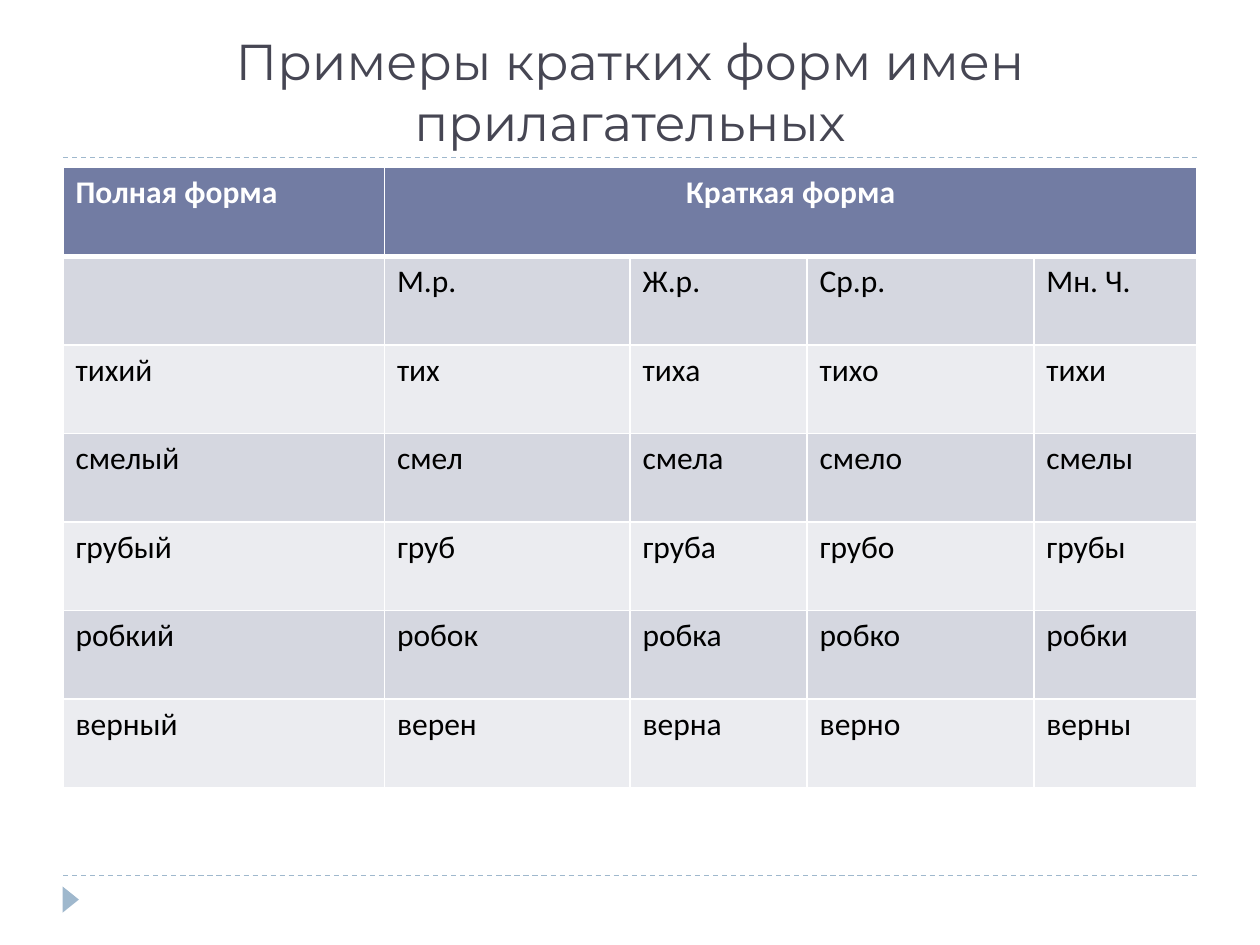
from lxml.etree import SubElement as Sub
from pptx import Presentation
from pptx.dml.color import RGBColor as RGB
from pptx.enum.dml import MSO_LINE as Dash
from pptx.enum.shapes import MSO_CONNECTOR as Conn, MSO_SHAPE as Shape
from pptx.enum.text import MSO_ANCHOR as Anchor, PP_ALIGN as Align
from pptx.oxml.ns import qn
from pptx.util import Cm, Pt

HUES = {
    "title": "464653",
    "accent": "9FB8CD",
    "head": "727CA3",
    "dark": "D5D7E0",
    "light": "EBECF0",
    "white": "FFFFFF",
    "black": "000000",
}
LEFT, WIDTH = 1.27, 22.86
COLS = [6.48, 4.95, 3.57, 4.57, 3.29]
ROWS = [
    ["Полная форма", "Краткая форма", "", "", ""],
    ["", "М.р.", "Ж.р.", "Ср.р.", "Мн. Ч."],
    ["тихий", "тих", "тиха", "тихо", "тихи"],
    ["смелый", "смел", "смела", "смело", "смелы"],
    ["грубый", "груб", "груба", "грубо", "грубы"],
    ["робкий", "робок", "робка", "робко", "робки"],
    ["верный", "верен", "верна", "верно", "верны"],
]


def hue(name):
    return RGB.from_string(HUES[name])


def style(para, face, size, color, bold=False):
    for run in para.runs:
        font = run.font
        font.name, font.size, font.bold = face, Pt(size), bold
        font.color.rgb = hue(color)


def add_title(slide, text):
    box = slide.shapes.add_textbox(Cm(LEFT), Cm(0.43), Cm(WIDTH), Cm(2.75))
    frame = box.text_frame
    frame.word_wrap = True
    frame.vertical_anchor = Anchor.BOTTOM
    frame.text = text
    para = frame.paragraphs[0]
    para.alignment = Align.CENTER
    style(para, "Montserrat", 28.8, "title")


def add_rule(slide, y):
    rule = slide.shapes.add_connector(
        Conn.STRAIGHT, Cm(LEFT), Cm(y), Cm(LEFT + WIDTH), Cm(y))
    rule.line.color.rgb = hue("accent")
    rule.line.width = Pt(0.75)
    rule.line.dash_style = Dash.DASH
    Sub(rule._element.spPr, qn("a:effectLst"))


def add_marker(slide):
    mark = slide.shapes.add_shape(
        Shape.ISOSCELES_TRIANGLE, Cm(1.16), Cm(17.97), Cm(0.53), Cm(0.33))
    mark.rotation = 90
    mark.shadow.inherit = False
    mark.fill.solid()
    mark.fill.fore_color.rgb = hue("accent")
    mark.line.fill.background()


def add_edges(cell, top, bottom):
    props = cell._tc.get_or_add_tcPr()
    for side, width in zip("LRTB", (1, 1, top, bottom)):
        edge = Sub(props, qn(f"a:ln{side}"), w=str(Pt(width)))
        fill = Sub(edge, qn("a:solidFill"))
        Sub(fill, qn("a:srgbClr"), val=HUES["white"])


def set_cell(cell, text, row):
    head = row == 0
    add_edges(cell, 3 if row == 1 else 1, 3 if head else 1)
    cell.fill.solid()
    band = "head" if head else "dark" if row % 2 else "light"
    cell.fill.fore_color.rgb = hue(band)
    cell.text_frame.text = text
    para = cell.text_frame.paragraphs[0]
    style(para, "Calibri", 18, "white" if head else "black", head)


def add_forms(slide):
    table = slide.shapes.add_table(
        len(ROWS), len(COLS), Cm(LEFT), Cm(3.38), Cm(WIDTH), Cm(12.5)).table
    for col, width in zip(table.columns, COLS):
        col.width = Cm(width)
    for r, row in enumerate(ROWS):
        for c, text in enumerate(row):
            set_cell(table.cell(r, c), text, r)
    # Shared heading over the four short forms
    short = table.cell(0, 1)
    short.merge(table.cell(0, 4))
    short.text_frame.paragraphs[0].alignment = Align.CENTER


def main():
    deck = Presentation()
    deck.slide_width, deck.slide_height = Cm(25.4), Cm(19.05)
    slide = deck.slides.add_slide(deck.slide_layouts[6])

    # Page frame
    for y in (17.65, 3.18):
        add_rule(slide, y)
    add_marker(slide)

    # Content
    add_title(slide, "Примеры кратких форм имен прилагательных")
    add_forms(slide)
    deck.save("out.pptx")


if __name__ == "__main__":
    main()
